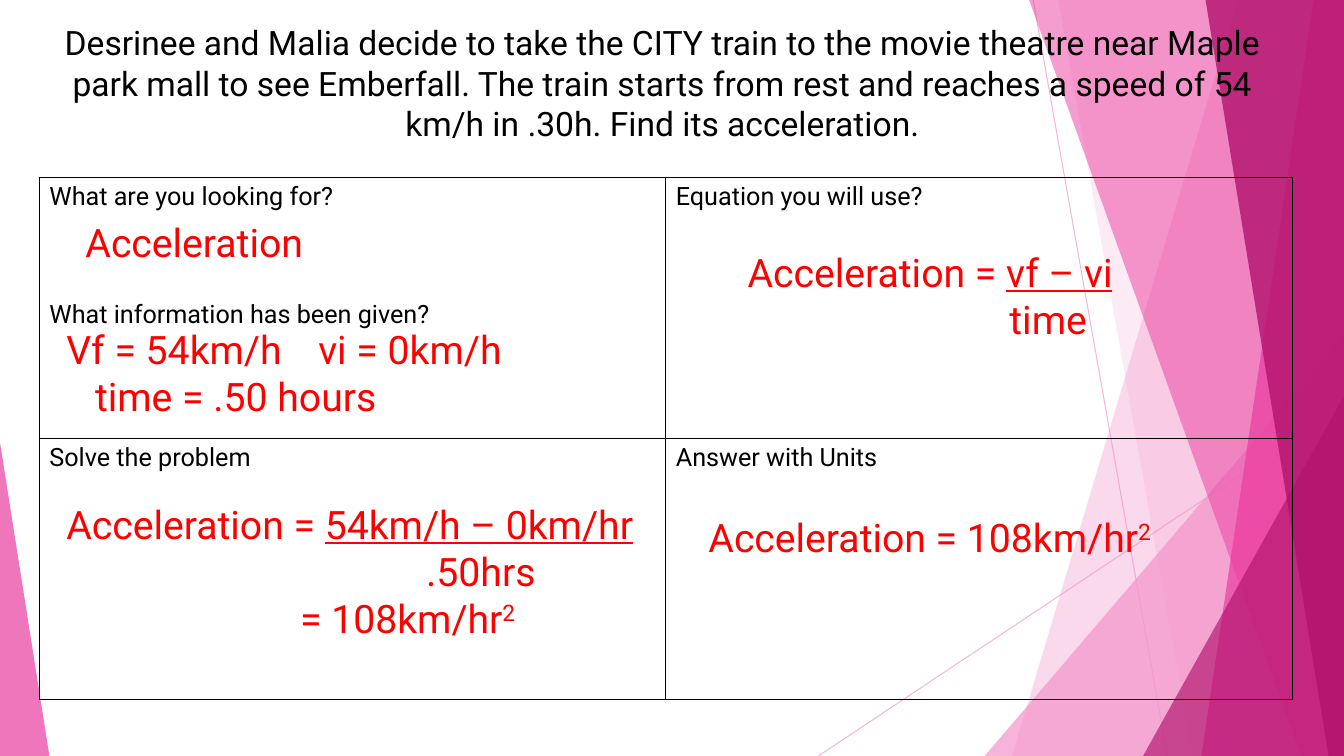
from dataclasses import dataclass

from lxml.etree import SubElement
from pptx import Presentation
from pptx.dml.color import RGBColor
from pptx.enum.shapes import MSO_CONNECTOR, MSO_SHAPE
from pptx.enum.text import MSO_ANCHOR, MSO_AUTO_SIZE, PP_ALIGN
from pptx.oxml.ns import qn
from pptx.util import Pt

PROBLEM = (
    "Desrinee and Malia decide to take the CITY train to the movie theatre near Maple "
    "park mall to see Emberfall. The train starts from rest and reaches a speed of 54 "
    "km/h in .30h. Find its acceleration."
)
QUESTIONS = [
    [["What are you looking for?", "What information has been given?"], ["Equation you will use?"]],
    [["Solve the problem"], ["Answer with Units"]],
]
ANSWERS = [
    ((54, 152.6, 391, 41), [("Acceleration", {})]),
    ((40.3, 229, 405, 75), [
        ("Vf = 54km/h\tvi = 0km/h", {"tab": 188}),
        ("time = .50 hours", {"indent": 20.5}),
    ]),
    ((527, 173.5, 391, 75), [
        ("Acceleration = ", {"underlined": "vf – vi"}),
        ("time", {"indent": 187}),
    ]),
    ((40.3, 353.5, 423.4, 109), [
        ("Acceleration = ", {"underlined": "54km/h – 0km/hr"}),
        (".50hrs", {"indent": 257}),
        ("= 108km/hr", {"indent": 167, "raised": "2"}),
    ]),
    ((499, 362.9, 391, 41), [("Acceleration = 108km/hr", {"raised": "2"})]),
]


@dataclass(frozen=True)
class Theme:
    font: str = "Roboto"
    ink: str = "000000"
    answer: str = "FF0000"
    light: str = "F496CB"
    pink: str = "EB3D9F"
    deep: str = "B2136D"
    problem_size: int = 24
    question_size: int = 18
    answer_size: int = 28


THEME = Theme()
WIDTH, HEIGHT = 960, 540
TABLE_BOX = (28.1, 126.7, 895, 373)
QUESTION_GAP = 63
RAYS = [((738, 0), (833.8, 540)), ((960, 290.2), (584.6, 540))]
FACETS = [
    ([(884.2, 0), (960, 0), (960, 540), (722.9, 540)], THEME.light, 36),
    ([(756, 0), (960, 0), (960, 540), (851.8, 540)], THEME.light, 20),
    ([(960, 239.8), (960, 540), (703.4, 540)], THEME.light, 72),
    ([(735.1, 0), (960, 0), (960, 540), (929.5, 540)], THEME.pink, 50),
    ([(938.2, 0), (960, 0), (960, 540), (858.2, 540)], THEME.pink, 70),
    ([(861.1, 0), (960, 0), (960, 540), (949, 540)], THEME.deep, 80),
    ([(960, 283), (960, 540), (816.5, 540)], THEME.deep, 66),
    ([(0, 316.1), (35.3, 540), (0, 540)], THEME.pink, 70),
]


def points(values):
    return [Pt(value) for value in values]


def write(frame, text, *, size, color, underlined="", raised="", indent=0, tab=0,
          space_before=0, align=PP_ALIGN.LEFT):
    paragraph = frame.add_paragraph() if frame.text else frame.paragraphs[0]
    paragraph.alignment = align
    paragraph.space_before = Pt(space_before)
    settings = paragraph._p.get_or_add_pPr()
    settings.set("marL", str(Pt(indent)))
    settings.set("indent", "0")
    if tab:
        stops = SubElement(settings, qn("a:tabLst"))
        SubElement(stops, qn("a:tab"), pos=str(Pt(tab)), algn="l")
    for part in filter(None, (text, underlined, raised)):
        run = paragraph.add_run()
        run.text = part
        run.font.name = THEME.font
        run.font.size = Pt(size)
        run.font.color.rgb = RGBColor.from_string(color)
        if part == underlined:
            run.font.underline = True
        if part == raised:
            run._r.get_or_add_rPr().set("baseline", "30000")


def set_opacity(part, percent):
    tint = part.element.spPr.find(".//" + qn("a:srgbClr"))
    SubElement(tint, qn("a:alpha"), val=str(percent * 1000))


def draw_background(slide):
    for start, end in RAYS:
        ray = slide.shapes.add_connector(MSO_CONNECTOR.STRAIGHT, *points(start + end))
        ray.line.color.rgb = RGBColor.from_string(THEME.light)
        ray.line.width = Pt(0.75)
        set_opacity(ray, 70)
        SubElement(ray.element.spPr, qn("a:effectLst"))
    for corners, color, opacity in FACETS:
        first, *others = [points(corner) for corner in corners]
        builder = slide.shapes.build_freeform(*first)
        builder.add_line_segments(others, close=True)
        facet = builder.convert_to_shape()
        facet.shadow.inherit = False
        facet.fill.solid()
        facet.fill.fore_color.rgb = RGBColor.from_string(color)
        set_opacity(facet, opacity)
        facet.line.fill.background()


def place_problem(slide):
    title = slide.shapes.title
    slide.shapes.element.append(title.element)
    title.left, title.top, title.width, title.height = points((28.1, 12.4, 890, 110))
    frame = title.text_frame
    frame.word_wrap = True
    frame.auto_size = MSO_AUTO_SIZE.NONE
    frame.vertical_anchor = MSO_ANCHOR.TOP
    write(frame, PROBLEM, size=THEME.problem_size, color=THEME.ink, align=PP_ALIGN.CENTER)


def add_borders(cell):
    settings = cell._tc.get_or_add_tcPr()
    for side in ("lnL", "lnR", "lnT", "lnB"):
        border = SubElement(settings, qn("a:" + side), w=str(Pt(1)))
        fill = SubElement(border, qn("a:solidFill"))
        SubElement(fill, qn("a:srgbClr"), val=THEME.ink)


def place_questions(slide):
    rows, columns = len(QUESTIONS), len(QUESTIONS[0])
    grid = slide.shapes.add_table(rows, columns, *points(TABLE_BOX)).table
    grid.first_row = grid.horz_banding = False
    for column in grid.columns:
        column.width = Pt(TABLE_BOX[2] / columns)
    for row in grid.rows:
        row.height = Pt(TABLE_BOX[3] / rows)
    for cell, questions in zip(grid.iter_cells(), sum(QUESTIONS, [])):
        add_borders(cell)
        cell.fill.background()
        for position, question in enumerate(questions):
            write(cell.text_frame, question, size=THEME.question_size, color=THEME.ink,
                  space_before=QUESTION_GAP * position)


def place_answers(slide):
    for box, lines in ANSWERS:
        frame = slide.shapes.add_textbox(*points(box)).text_frame
        frame.word_wrap = True
        for text, style in lines:
            write(frame, text, size=THEME.answer_size, color=THEME.answer, **style)


def main():
    deck = Presentation()
    deck.slide_width, deck.slide_height = points((WIDTH, HEIGHT))
    slide = deck.slides.add_slide(deck.slide_layouts.get_by_name("Title Only"))
    draw_background(slide)
    place_problem(slide)
    place_questions(slide)
    place_answers(slide)
    deck.save("out.pptx")


if __name__ == "__main__":
    main()
